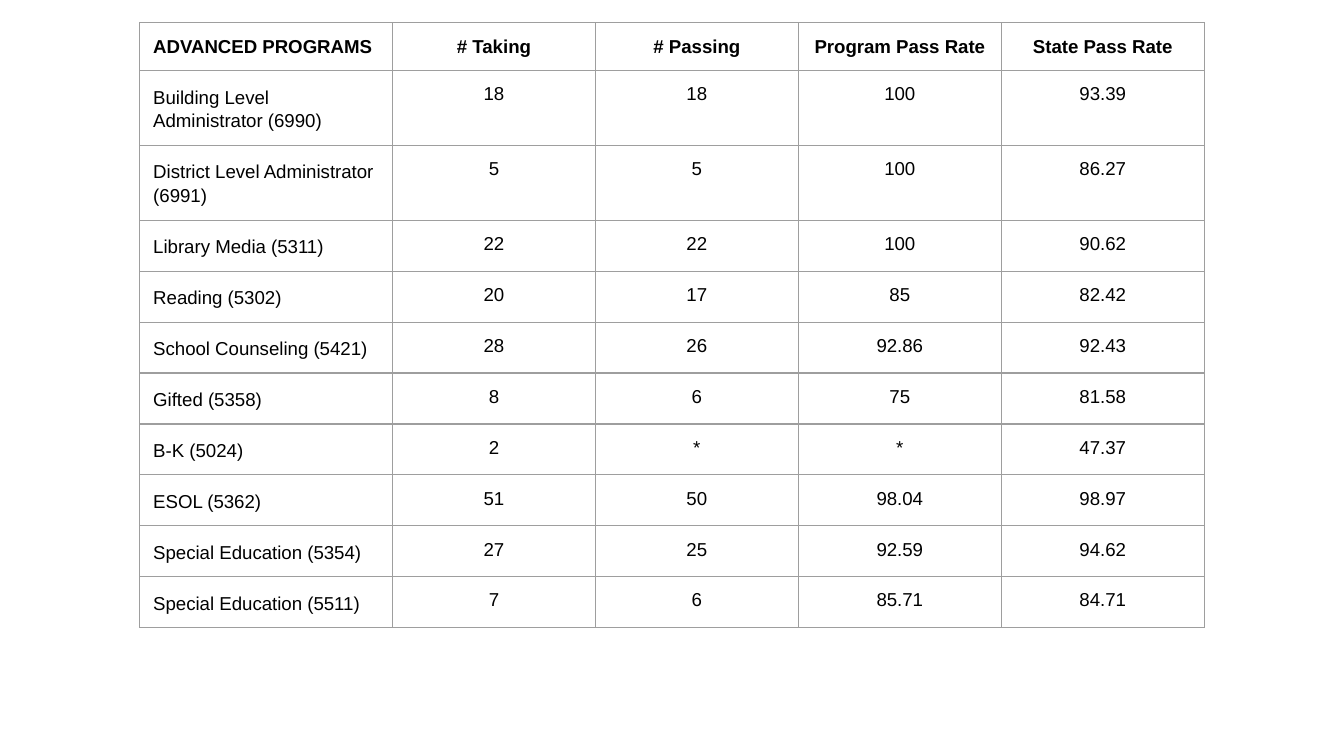
from lxml.etree import SubElement
from pptx import Presentation
from pptx.dml.color import RGBColor as RGB
from pptx.enum.text import MSO_ANCHOR as Anchor, PP_ALIGN as Align
from pptx.oxml.ns import qn
from pptx.util import Pt

PX = 4572  # EMU per px, 200 px to the inch
COLORS = {"text": "000000", "border": "9E9E9E", "background": "FFFFFF"}
FONT = "Arial"
INSET = 20

HEADINGS = ("ADVANCED PROGRAMS", "# Taking", "# Passing",
            "Program Pass Rate", "State Pass Rate")
PROGRAMS = [
    ("Building Level Administrator (6990)", "18", "18", "100", "93.39"),
    ("District Level Administrator (6991)", "5", "5", "100", "86.27"),
    ("Library Media (5311)", "22", "22", "100", "90.62"),
    ("Reading (5302)", "20", "17", "85", "82.42"),
    ("School Counseling (5421)", "28", "26", "92.86", "92.43"),
    ("Gifted (5358)", "8", "6", "75", "81.58"),
    ("B-K (5024)", "2", "*", "*", "47.37"),
    ("ESOL (5362)", "51", "50", "98.04", "98.97"),
    ("Special Education (5354)", "27", "25", "92.59", "94.62"),
    ("Special Education (5511)", "7", "6", "85.71", "84.71"),
]


def px(length):
    return length * PX


def write(frame, text, size=10, bold=False, align=Align.LEFT, spacing=None):
    paragraph = frame.paragraphs[0]
    paragraph.alignment = align
    if spacing:
        paragraph.line_spacing = spacing
    run = paragraph.add_run()
    run.text = text
    run.font.name = FONT
    run.font.size = Pt(size)
    run.font.bold = bold
    run.font.color.rgb = RGB.from_string(COLORS["text"])


def outline(cell, color, width=0.75):
    properties = cell._tc.get_or_add_tcPr()
    for side in ("a:lnL", "a:lnR", "a:lnT", "a:lnB"):
        border = SubElement(properties, qn(side), w=str(Pt(width)))
        fill = SubElement(border, qn("a:solidFill"))
        SubElement(fill, qn("a:srgbClr"), val=color)


def pass_rate_table(slide, left, top, width, height):
    rows = [HEADINGS, *PROGRAMS]
    table = slide.shapes.add_table(
        len(rows), len(HEADINGS), px(left), px(top), px(width), px(height)).table
    table.first_row = table.horz_banding = False

    # The four figure columns share what the program column leaves
    program_width = 376
    figure_width = (width - program_width) // (len(HEADINGS) - 1)
    for i, column in enumerate(table.columns):
        column.width = px(figure_width if i else program_width)
    for row in table.rows:
        row.height = px(height // len(rows))

    for r, values in enumerate(rows):
        for c, value in enumerate(values):
            cell = table.cell(r, c)
            cell.margin_left = cell.margin_right = px(INSET)
            cell.margin_top = cell.margin_bottom = px(INSET)
            cell.vertical_anchor = Anchor.TOP
            outline(cell, COLORS["border"])
            cell.fill.background()
            write(cell.text_frame, value, bold=r == 0,
                  align=Align.CENTER if c else Align.LEFT,
                  spacing=1.15 if r and not c else None)


def main():
    deck = Presentation()
    deck.slide_width, deck.slide_height = px(2000), px(1125)
    slide = deck.slides.add_slide(deck.slide_layouts[6])
    background = slide.background.fill
    background.solid()
    background.fore_color.rgb = RGB.from_string(COLORS["background"])
    pass_rate_table(slide, left=208, top=34, width=1584, height=594)
    deck.save("out.pptx")


if __name__ == "__main__":
    main()
